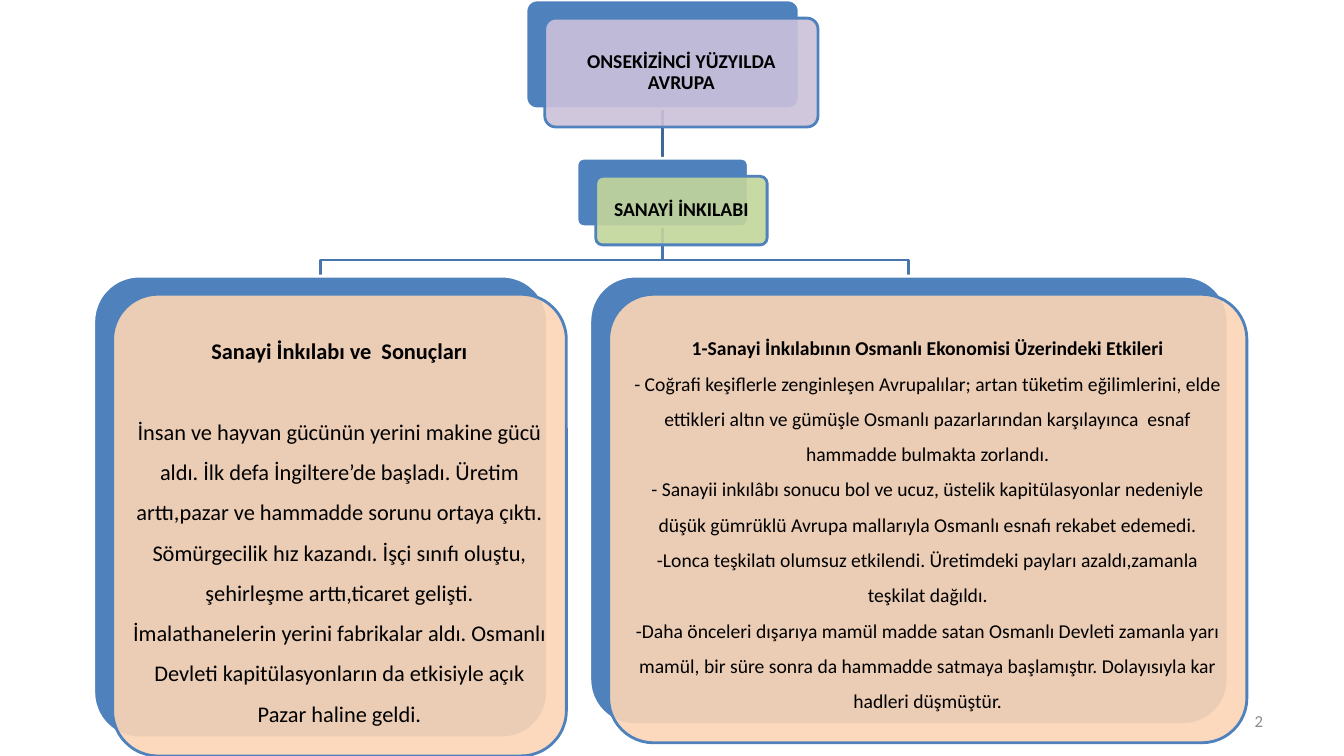
from collections import namedtuple

from lxml import etree
from pptx import Presentation
from pptx.dml.color import RGBColor
from pptx.enum.shapes import MSO_CONNECTOR, MSO_SHAPE
from pptx.enum.text import MSO_ANCHOR, MSO_AUTO_SIZE, PP_ALIGN
from pptx.oxml.ns import qn
from pptx.util import Inches, Pt

ROUNDED, STRAIGHT = MSO_SHAPE.ROUNDED_RECTANGLE, MSO_CONNECTOR.STRAIGHT
MIDDLE, NO_FIT = MSO_ANCHOR.MIDDLE, MSO_AUTO_SIZE.NONE
CENTER, RIGHT = PP_ALIGN.CENTER, PP_ALIGN.RIGHT
TOP_SIDE, BOTTOM_SIDE = 0, 2

BLUE = RGBColor(0x4F, 0x81, 0xBD)
STEM_BLUE = RGBColor(0x3F, 0x67, 0x97)
BRANCH_BLUE = RGBColor(0x48, 0x75, 0xAC)
LILAC = RGBColor(0xCC, 0xC1, 0xDA)
GREEN = RGBColor(0xC3, 0xD6, 0x9B)
PEACH = RGBColor(0xFC, 0xD5, 0xB5)
WHITE = RGBColor(0xFF, 0xFF, 0xFF)
BLACK = RGBColor(0, 0, 0)
GREY = RGBColor(0x8C, 0x8C, 0x8C)

FONT = "Calibri"
WIDTH, HEIGHT = Inches(13.33), Inches(7.5)
Box = namedtuple("Box", "left top width height")

TITLE = "ONSEKİZİNCİ YÜZYILDA AVRUPA"
TOPIC = "SANAYİ İNKILABI"
RESULTS_HEAD = "Sanayi İnkılabı ve  Sonuçları"
RESULTS = [
    "İnsan ve hayvan gücünün yerini makine gücü aldı. İlk defa İngiltere’de başladı. "
    "Üretim arttı,pazar ve hammadde sorunu ortaya çıktı. Sömürgecilik hız kazandı. "
    "İşçi sınıfı oluştu, şehirleşme arttı,ticaret gelişti. İmalathanelerin yerini "
    "fabrikalar aldı. Osmanlı Devleti kapitülasyonların da etkisiyle açık Pazar haline geldi.",
]
EFFECTS_HEAD = "1-Sanayi İnkılabının Osmanlı Ekonomisi Üzerindeki Etkileri"
EFFECTS = [
    "- Coğrafi keşiflerle zenginleşen Avrupalılar; artan tüketim eğilimlerini, elde "
    "ettikleri altın ve gümüşle Osmanlı pazarlarından karşılayınca  esnaf hammadde "
    "bulmakta zorlandı.",
    "- Sanayii inkılâbı sonucu bol ve ucuz, üstelik kapitülasyonlar nedeniyle düşük "
    "gümrüklü Avrupa mallarıyla Osmanlı esnafı rekabet edemedi.",
    "-Lonca teşkilatı olumsuz etkilendi. Üretimdeki payları azaldı,zamanla teşkilat dağıldı.",
    "-Daha önceleri dışarıya mamül madde satan Osmanlı Devleti zamanla yarı mamül, bir "
    "süre sonra da hammadde satmaya başlamıştır. Dolayısıyla kar hadleri düşmüştür.",
]


def across(percent):
    return round(WIDTH * percent / 100)


def down(percent):
    return round(HEIGHT * percent / 100)


def centred_box(center, top, width, height):
    """A box from percentages of the slide, placed by its centre line."""
    return Box(across(center) - across(width) // 2, down(top), across(width), down(height))


def prepare_frame(frame, inset):
    frame.word_wrap = True
    frame.auto_size = NO_FIT
    frame.vertical_anchor = MIDDLE
    frame.margin_left = frame.margin_right = Inches(inset)
    frame.margin_top = frame.margin_bottom = Inches(inset)


def write_para(para, text, size, color=BLACK, bold=False, spacing=1.0, align=CENTER):
    para.alignment = align
    para.line_spacing = spacing
    para.space_before = para.space_after = Pt(0)
    span = para.add_run()
    span.text = text
    span.font.name = FONT
    span.font.size = Pt(size)
    span.font.bold = bold
    span.font.color.rgb = color


def add_panel(page, box, fill, line):
    panel = page.shapes.add_shape(ROUNDED, *box)
    panel.adjustments[0] = 0.1
    panel.shadow.inherit = False
    panel.fill.solid()
    panel.fill.fore_color.rgb = fill
    panel.line.color.rgb = line
    panel.line.width = Pt(2)
    return panel


def add_card(page, box, fill):
    """Blue panel with a see-through panel shifted down and right over it."""
    back = add_panel(page, box, BLUE, WHITE)
    shifted = box._replace(left=box.left + across(1.4), top=box.top + down(2.4))
    front = add_panel(page, shifted, fill, BLUE)
    color = front._element.spPr.find(qn("a:solidFill")).find(qn("a:srgbClr"))
    etree.SubElement(color, qn("a:alpha")).set("val", "90000")
    prepare_frame(front.text_frame, 0.06)
    return back, front


def add_title_card(page, box):
    back, front = add_card(page, box, LILAC)
    title = page.shapes.title
    title.left, title.top = front.left, front.top
    title.width, title.height = front.width, front.height
    prepare_frame(title.text_frame, 0.1)
    write_para(title.text_frame.paragraphs[0], TITLE, 14, bold=True, spacing=0.9)
    front._element.addnext(title._element)  # bring the title above its card
    return back


def add_topic_card(page, box):
    back, front = add_card(page, box, GREEN)
    write_para(front.text_frame.paragraphs[0], TOPIC, 14, bold=True, spacing=0.9)
    return back


def add_detail_card(page, box, heading, lines, size, gap):
    front = add_card(page, box, PEACH)[1]
    frame = front.text_frame
    write_para(frame.paragraphs[0], heading, size, bold=True, spacing=1.5)
    frame.paragraphs[0].space_after = Pt(gap)
    for line in lines:
        write_para(frame.add_paragraph(), line, size, spacing=1.5)


def add_branch(page, parent, child):
    """Bent line from the parent's bottom to the child's top."""
    start_x, end_x = parent.left + parent.width // 2, child.left + child.width // 2
    bend = down(34.4)
    builder = page.shapes.build_freeform(start_x, parent.top + parent.height)
    builder.add_line_segments([(start_x, bend), (end_x, bend), (end_x, child.top)], close=False)
    branch = builder.convert_to_shape()
    branch.shadow.inherit = False
    branch.fill.background()
    branch.line.color.rgb = BRANCH_BLUE
    branch.line.width = Pt(2)


def add_stem(page):
    stem = page.shapes.add_connector(STRAIGHT, 0, 0, 0, 0)
    stem.line.color.rgb = STEM_BLUE
    stem.line.width = Pt(2)
    etree.SubElement(stem._element.spPr, qn("a:effectLst"))
    return stem


def add_page_number(page, box):
    frame = page.shapes.add_textbox(*box).text_frame
    prepare_frame(frame, 0.07)
    frame.margin_right = Inches(0.14)
    write_para(frame.paragraphs[0], "2", 12, color=GREY, align=RIGHT)


def build_page(page):
    title_box = centred_box(49.3, 0, 20.33, 14.4)
    topic_box = centred_box(49.3, 20.93, 12.75, 9.07)
    results_box = centred_box(23.86, 36.53, 33.76, 61.07)
    effects_box = centred_box(67.63, 36.53, 47.49, 59.33)

    # Lines lie behind the cards
    for child in (effects_box, results_box):
        add_branch(page, topic_box, child)
    stem = add_stem(page)

    # Cards
    title_back = add_title_card(page, title_box)
    topic_back = add_topic_card(page, topic_box)
    stem.begin_connect(title_back, BOTTOM_SIDE)
    stem.end_connect(topic_back, TOP_SIDE)
    add_detail_card(page, results_box, RESULTS_HEAD, RESULTS, 16, gap=29)
    add_detail_card(page, effects_box, EFFECTS_HEAD, EFFECTS, 14, gap=0)

    add_page_number(page, Box(across(71.7), down(92.67), across(23.33), down(5.33)))


def main():
    deck = Presentation()
    deck.slide_width, deck.slide_height = WIDTH, HEIGHT
    title_only = deck.slide_layouts[5]
    build_page(deck.slides.add_slide(title_only))
    deck.save("out.pptx")


if __name__ == "__main__":
    main()
